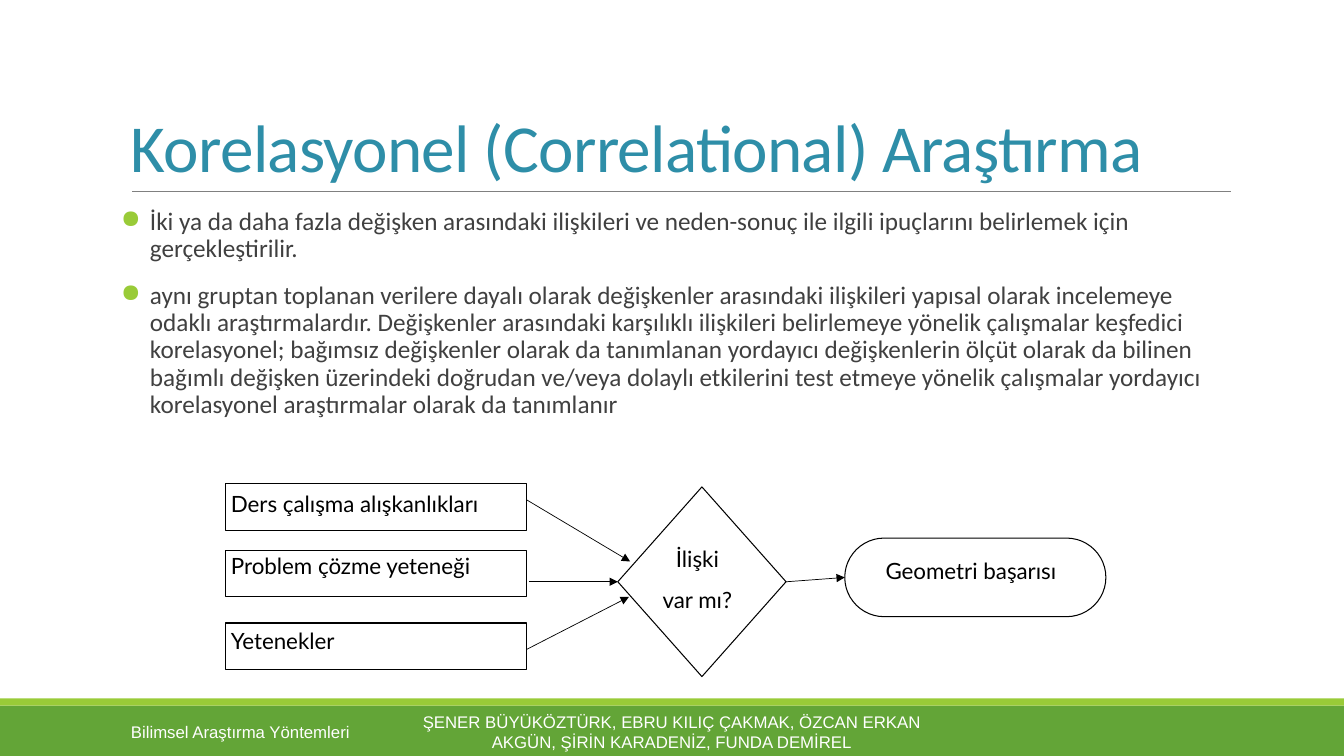
from dataclasses import dataclass

from pptx import Presentation
from pptx.dml.color import RGBColor
from pptx.enum.shapes import MSO_CONNECTOR, MSO_SHAPE
from pptx.enum.text import MSO_ANCHOR, PP_ALIGN
from pptx.oxml.ns import qn
from pptx.util import Cm, Pt
from lxml.etree import SubElement


@dataclass(frozen=True)
class Theme:
    title: str = "2E8EA8"
    body: str = "404040"
    ink: str = "000000"
    paper: str = "FFFFFF"
    footer_text: str = "FEFEFE"
    rule: str = "808080"
    green: str = "63A537"
    lime: str = "99CB38"
    text_font: str = "Calibri"
    footer_font: str = "Arial"
    diagram_font: str = "Lato"
    title_size: int = 48
    body_size: int = 18
    label_size: int = 16
    footer_size: int = 12


@dataclass(frozen=True)
class Box:
    left: float
    top: float
    width: float
    height: float

    def inner(self, left, top, width, height):
        """A box whose place is counted from this one's corner."""
        return Box(self.left + left, self.top + top, width, height)

    def lengths(self):
        return Cm(self.left), Cm(self.top), Cm(self.width), Cm(self.height)


THEME = Theme()


# Building parts
def add_block(page, box, kind=MSO_SHAPE.RECTANGLE, fill=None, line=None):
    shape = page.shapes.add_shape(kind, *box.lengths())
    shape.shadow.inherit = False
    if fill:
        shape.fill.solid()
        shape.fill.fore_color.rgb = RGBColor.from_string(fill)
    else:
        shape.fill.background()
    if line:
        shape.line.color.rgb = RGBColor.from_string(line)
        shape.line.width = Pt(0.75)
    else:
        shape.line.fill.background()
    return shape


def add_text(page, box, lines, font, size, color, align=PP_ALIGN.LEFT,
             anchor=MSO_ANCHOR.TOP, insets=(0.25, 0.13), after=0):
    frame = page.shapes.add_textbox(*box.lengths()).text_frame
    frame.word_wrap = True
    frame.vertical_anchor = anchor
    frame.margin_left = frame.margin_right = Cm(insets[0])
    frame.margin_top = frame.margin_bottom = Cm(insets[1])
    frame.text = "\n".join(lines)
    for para in frame.paragraphs:
        para.alignment = align
        para.space_after = Pt(after)
        for span in para.runs:
            span.font.name = font
            span.font.size = Pt(size)
            span.font.color.rgb = RGBColor.from_string(color)
    return frame


def add_line(page, start, end, color, arrow=False):
    line = page.shapes.add_connector(
        MSO_CONNECTOR.STRAIGHT, *(Cm(value) for value in start + end))
    line.line.color.rgb = RGBColor.from_string(color)
    line.line.width = Pt(0.5)
    if arrow:
        SubElement(line.line._get_or_add_ln(), qn("a:tailEnd"),
                   type="triangle", w="med", len="med")
    SubElement(line._element.spPr, qn("a:effectLst"))
    return line


# Heading with the rule below it
def add_heading(page, box, text):
    bottom = box.top + box.height
    add_line(page, (box.left + 0.28, bottom), (box.left + 27.96, bottom), THEME.rule)
    frame = add_text(page, box, [text], THEME.text_font, THEME.title_size,
                     THEME.title, anchor=MSO_ANCHOR.BOTTOM)
    para = frame.paragraphs[0]
    para.line_spacing = 0.85
    para.runs[0].font._element.set("spc", "-50")


# Bulleted definition
def add_bullets(page, box, items):
    frame = add_text(page, box, items, THEME.text_font, THEME.body_size,
                     THEME.body, insets=(0, 0.13), after=2)
    for para in frame.paragraphs:
        para.line_spacing = 0.9
        para.space_before = Pt(12)
        properties = para._p.get_or_add_pPr()
        properties.set("marL", str(Cm(0.73)))
        properties.set("indent", str(-Cm(0.73)))
        bullet_color = SubElement(properties, qn("a:buClr"))
        SubElement(bullet_color, qn("a:srgbClr"), val=THEME.lime)
        SubElement(properties, qn("a:buChar"), char="●")


# Footer band
def add_footer(page, box, course, authors):
    add_block(page, box, fill=THEME.green)
    add_block(page, box.inner(0, -0.18, box.width, 0.18), fill=THEME.lime)
    add_text(page, box.inner(3.05, 0.15, 6.86, 1.02), [course], THEME.footer_font,
             THEME.footer_size, THEME.footer_text, anchor=MSO_ANCHOR.MIDDLE)
    add_text(page, box.inner(10.24, 0.15, 13.39, 1.02), [authors], THEME.footer_font,
             THEME.footer_size, THEME.paper, PP_ALIGN.CENTER, MSO_ANCHOR.MIDDLE)


# Variables, question and outcome
def add_diagram(page, box, variables, question, outcome):
    def add_label(place, lines, align=PP_ALIGN.LEFT):
        add_text(page, place, lines, THEME.diagram_font, THEME.label_size,
                 THEME.ink, align, insets=(0, 0), after=10)

    def add_arrow(start, end):
        return add_line(page, (box.left + start[0], box.top + start[1]),
                        (box.left + end[0], box.top + end[1]), THEME.ink, arrow=True)

    for name, top, label_drop in variables:
        place = box.inner(0, top, 7.59, 1.17)
        add_block(page, place, line=THEME.ink)
        add_label(place.inner(0.13, label_drop, 7.44, 1.04), [name])

    diamond_box = box.inner(9.88, 0.08, 4.24, 4.78)
    diamond = add_block(page, diamond_box, MSO_SHAPE.DIAMOND, THEME.paper, THEME.ink)
    add_label(diamond_box.inner(0.38, 1.47, 3.25, 2.26), question, PP_ALIGN.CENTER)

    outcome_box = box.inner(15.6, 1.37, 6.58, 1.98)
    pill = add_block(page, outcome_box, MSO_SHAPE.ROUNDED_RECTANGLE, line=THEME.ink)
    pill.adjustments[0] = 0.5
    add_label(outcome_box.inner(0.27, 0.49, 5.82, 0.91), [outcome], PP_ALIGN.CENTER)

    add_arrow((7.59, 0.41), (10.19, 1.96))
    add_arrow((7.59, 4.17), (10.16, 2.85))
    add_arrow((7.65, 2.47), (9.88, 2.47)).end_connect(diamond, 1)
    result = add_arrow((14.12, 2.47), (15.6, 2.36))
    result.begin_connect(diamond, 3)
    result.end_connect(pill, 1)


def main():
    deck = Presentation()
    deck.slide_width, deck.slide_height = Cm(33.87), Cm(19.05)
    page = deck.slides.add_slide(deck.slide_layouts[6])

    add_footer(page, Box(0, 17.78, 33.87, 1.27), "Bilimsel Araştırma Yöntemleri",
               "ŞENER BÜYÜKÖZTÜRK, EBRU KILIÇ ÇAKMAK, ÖZCAN ERKAN AKGÜN, "
               "ŞİRİN KARADENİZ, FUNDA DEMİREL")
    add_heading(page, Box(3.05, 0.79, 27.94, 4.04),
                "Korelasyonel (Correlational) Araştırma")
    add_bullets(page, Box(3.05, 5.13, 27.94, 11.18), [
        "İki ya da daha fazla değişken arasındaki ilişkileri ve neden-sonuç ile "
        "ilgili ipuçlarını belirlemek için gerçekleştirilir.",
        "aynı gruptan toplanan verilere dayalı olarak değişkenler arasındaki "
        "ilişkileri yapısal olarak incelemeye odaklı araştırmalardır. Değişkenler "
        "arasındaki karşılıklı ilişkileri belirlemeye yönelik çalışmalar keşfedici "
        "korelasyonel; bağımsız değişkenler olarak da tanımlanan yordayıcı "
        "değişkenlerin ölçüt olarak da bilinen bağımlı değişken üzerindeki doğrudan "
        "ve/veya dolaylı etkilerini test etmeye yönelik çalışmalar yordayıcı "
        "korelasyonel araştırmalar olarak da tanımlanır",
    ])
    add_diagram(page, Box(5.69, 12.19, 22.18, 4.86),
                [("Ders çalışma alışkanlıkları", 0, 0.15),
                 ("Problem çözme yeteneği", 1.68, 0.05),
                 ("Yetenekler", 3.51, 0.1)],
                ["İlişki", "var mı?"], "Geometri başarısı")
    deck.save("out.pptx")


if __name__ == "__main__":
    main()
